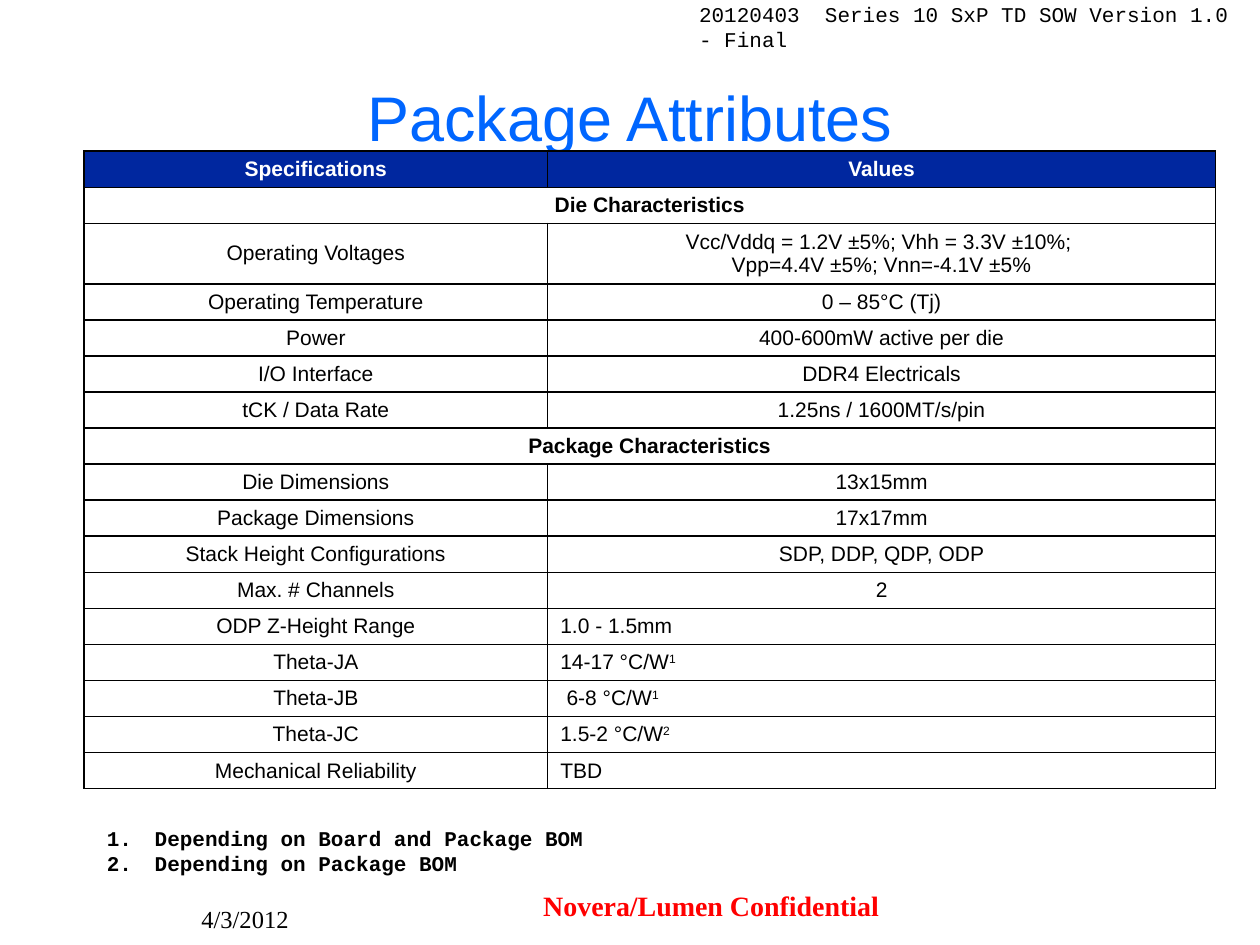
"""Build the Package Attributes slide."""
from dataclasses import dataclass

from lxml.etree import SubElement
from pptx import Presentation
from pptx.dml.color import RGBColor
from pptx.enum.text import MSO_ANCHOR as Anchor, PP_ALIGN as Align
from pptx.oxml import parse_xml
from pptx.oxml.ns import nsdecls, qn
from pptx.util import Inches, Pt

COLORS = {"black": "000000", "white": "FFFFFF", "blue": "0066FF",
          "navy": "00279F", "red": "FF0000"}
SLIDE_WIDTH, SLIDE_HEIGHT = Inches(10), Inches(7.5)
COLUMN_SHARES = (36.8, 53)
LINE_SHARE, TWO_LINE_SHARE = 3.82, 6.35


@dataclass(frozen=True)
class Area:
    """Position and size in percent of the slide."""
    left: float
    top: float
    width: float
    height: float

    def lengths(self) -> tuple:
        return (across(self.left), down(self.top),
                across(self.width), down(self.height))


@dataclass(frozen=True)
class Style:
    """Look of a paragraph."""
    font: str = "Arial"
    size: int = 12
    color: str = "black"
    bold: bool = False
    align: Align = Align.LEFT


@dataclass(frozen=True)
class Label:
    """Text box with one style."""
    area: Area
    lines: tuple
    style: Style
    anchor: Anchor = Anchor.TOP
    numbered: bool = False


@dataclass(frozen=True)
class Attribute:
    """Table row; without values it is a section heading."""
    name: str
    values: tuple = ()
    note: str = ""
    align: Align = Align.CENTER
    indent: float = 0.1


LABELS = (
    Label(Area(54.5, -0.53, 45.3, 4),
          ("20120403  Series 10 SxP TD SOW Version 1.0 - Final",),
          Style("Courier New")),
    Label(Area(5, 4, 90, 16.67), ("Package Attributes",),
          Style(size=36, color="blue", align=Align.CENTER), Anchor.MIDDLE),
    Label(Area(7.5, 86.67, 41.7, 6.67),
          ("Depending on Board and Package BOM", "Depending on Package BOM"),
          Style("Courier New", bold=True), numbered=True),
    Label(Area(15, 95, 23.3, 5), ("4/3/2012",),
          Style("Times New Roman", 14)),
    Label(Area(40.6, 93.33, 31.7, 4.67), ("Novera/Lumen Confidential",),
          Style("Times New Roman", 16, "red", True, Align.CENTER)),
)
HEADINGS = ("Specifications", "Values")
ATTRIBUTES = (
    Attribute("Die Characteristics"),
    Attribute("Operating Voltages", ("Vcc/Vddq = 1.2V ±5%; Vhh = 3.3V ±10%; ",
                                     "Vpp=4.4V ±5%; Vnn=-4.1V ±5%")),
    Attribute("Operating Temperature", ("0 – 85°C (Tj)",)),
    Attribute("Power", ("400-600mW active per die",)),
    Attribute("I/O Interface", ("DDR4 Electricals",)),
    Attribute("tCK / Data Rate", ("1.25ns / 1600MT/s/pin",)),
    Attribute("Package Characteristics"),
    Attribute("Die Dimensions", ("13x15mm",)),
    Attribute("Package Dimensions", ("17x17mm",)),
    Attribute("Stack Height Configurations", ("SDP, DDP, QDP, ODP",)),
    Attribute("Max. # Channels", ("2",)),
    Attribute("ODP Z-Height Range", ("1.0 - 1.5mm",), align=Align.LEFT),
    Attribute("Theta-JA", ("14-17 °C/W",), "1", Align.LEFT),
    Attribute("Theta-JB", ("6-8 °C/W",), "1", Align.LEFT, 0.15),
    Attribute("Theta-JC", ("1.5-2 °C/W",), "2", Align.LEFT),
    Attribute("Mechanical Reliability", ("TBD",), align=Align.LEFT),
)


def across(share: float) -> int:
    return round(SLIDE_WIDTH * share / 100)


def down(share: float) -> int:
    return round(SLIDE_HEIGHT * share / 100)


def write(frame, lines: tuple, style: Style, numbered: bool = False) -> None:
    for index, line in enumerate(lines):
        para = frame.add_paragraph() if index else frame.paragraphs[0]
        para.add_run().text = line
        para.alignment = style.align
        if numbered:
            properties = para._p.get_or_add_pPr()
            properties.set("marL", str(Inches(0.38)))
            properties.set("indent", str(-Inches(0.38)))
            SubElement(properties, qn("a:buFont"), typeface="+mj-lt")
            SubElement(properties, qn("a:buAutoNum"), type="arabicPeriod")
        font = para.font
        font.name, font.size, font.bold = style.font, Pt(style.size), style.bold
        font.color.rgb = RGBColor.from_string(COLORS[style.color])


def draw_label(page, label: Label) -> None:
    frame = page.shapes.add_textbox(*label.area.lengths()).text_frame
    frame.word_wrap = True
    frame.vertical_anchor = label.anchor
    write(frame, label.lines, label.style, label.numbered)


def draw_borders(cell) -> None:
    properties = cell._tc.get_or_add_tcPr()
    for index, side in enumerate(("lnL", "lnR", "lnT", "lnB")):
        properties.insert(index, parse_xml(
            f'<a:{side} {nsdecls("a")} w="{Pt(1)}"><a:solidFill>'
            f'<a:srgbClr val="{COLORS["black"]}"/></a:solidFill></a:{side}>'))


def fill_cell(cell, lines: tuple, style: Style) -> None:
    cell.vertical_anchor = Anchor.MIDDLE
    write(cell.text_frame, lines, style)


def draw_attribute(table, row: int, attribute: Attribute) -> None:
    name, value = table.cell(row, 0), table.cell(row, 1)
    section = not attribute.values
    fill_cell(name, (attribute.name,), Style(bold=section, align=Align.CENTER))
    if section:
        name.merge(value)
        write(value.text_frame, ("",), Style())
        return
    fill_cell(value, attribute.values, Style(align=attribute.align))
    value.margin_left = Inches(attribute.indent)
    if attribute.note:
        span = value.text_frame.paragraphs[-1].add_run()
        span.text = attribute.note
        span._r.get_or_add_rPr().set("baseline", "30000")


def draw_table(page) -> None:
    heights = [LINE_SHARE] + [TWO_LINE_SHARE if len(item.values) > 1
                              else LINE_SHARE for item in ATTRIBUTES]
    area = Area(6.67, 16, sum(COLUMN_SHARES), sum(heights))
    table = page.shapes.add_table(len(heights), len(COLUMN_SHARES),
                                  *area.lengths()).table
    table.first_row = table.horz_banding = False
    for column, share in zip(table.columns, COLUMN_SHARES):
        column.width = across(share)
    for row, share in zip(table.rows, heights):
        row.height = down(share)
    for cell in table.iter_cells():
        cell.fill.background()
        cell.margin_top = cell.margin_bottom = Inches(0.04)
    for column, heading in enumerate(HEADINGS):
        cell = table.cell(0, column)
        cell.fill.solid()
        cell.fill.fore_color.rgb = RGBColor.from_string(COLORS["navy"])
        fill_cell(cell, (heading,),
                  Style(color="white", bold=True, align=Align.CENTER))
    for row, attribute in enumerate(ATTRIBUTES, 1):
        draw_attribute(table, row, attribute)
    for cell in table.iter_cells():
        draw_borders(cell)


def main() -> None:
    deck = Presentation()
    deck.slide_width, deck.slide_height = SLIDE_WIDTH, SLIDE_HEIGHT
    page = deck.slides.add_slide(deck.slide_layouts[6])
    header, title, *footers = LABELS
    for label in (header, title):
        draw_label(page, label)
    draw_table(page)
    for label in footers:
        draw_label(page, label)
    deck.save("out.pptx")


if __name__ == "__main__":
    main()
